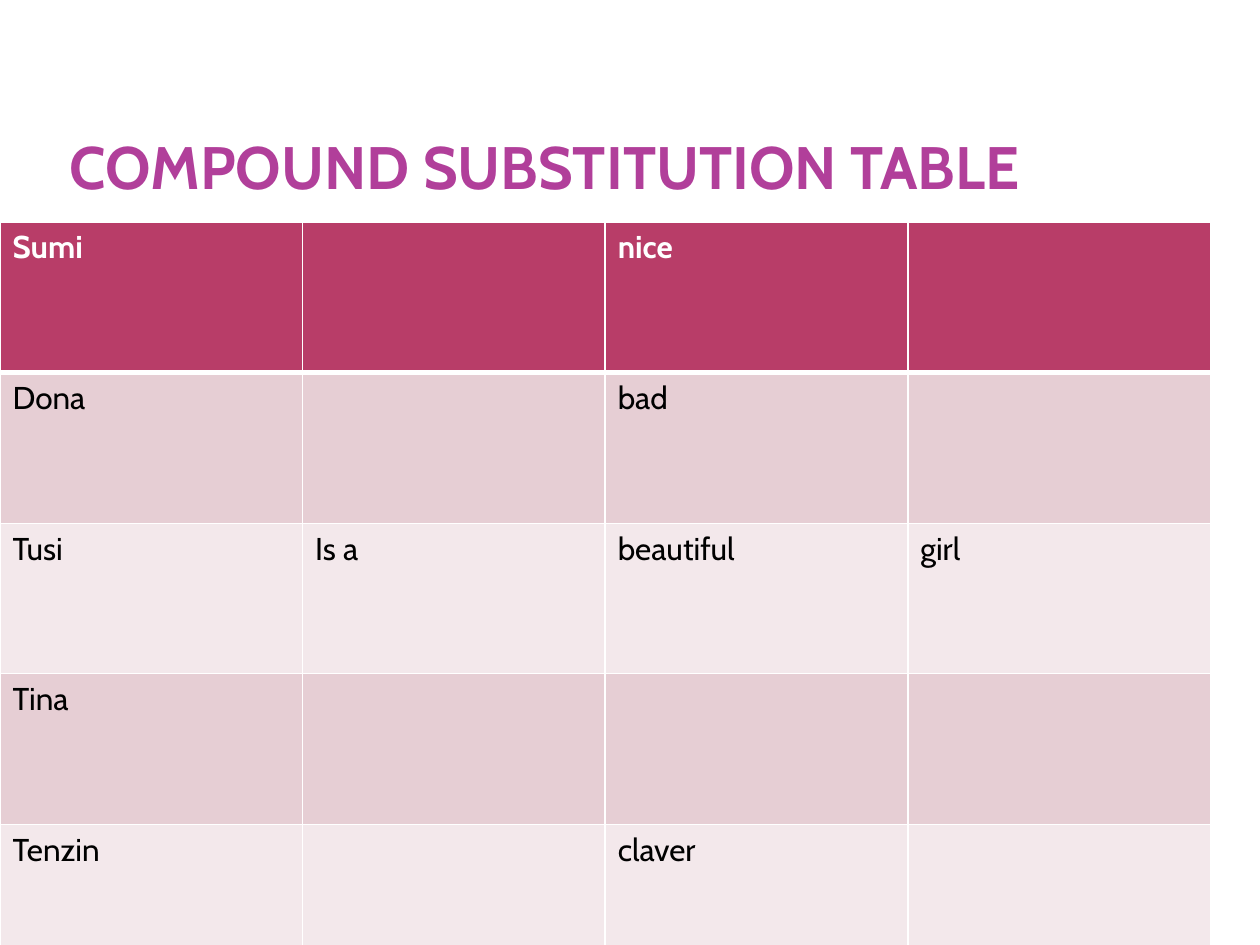
from dataclasses import dataclass

from lxml.etree import SubElement
from pptx import Presentation
from pptx.dml.color import RGBColor as Rgb
from pptx.enum.text import MSO_ANCHOR as Anchor, MSO_AUTO_SIZE as AutoSize, PP_ALIGN as Align
from pptx.oxml.ns import qn
from pptx.util import Cm, Pt


@dataclass(frozen=True)
class Theme:
    """Colours, font and type sizes of the slide."""
    font: str = "Cabin"
    title: str = "B13F9A"
    header: str = "B83D68"
    bands: tuple = ("E6CED4", "F3E8EB")
    rule: str = "FFFFFF"
    header_text: str = "FFFFFF"
    body_text: str = "000000"
    title_size: float = 34.2
    cell_size: float = 18
    thin: float = 1
    thick: float = 3


THEME = Theme()
WORDS = (
    ("Sumi", "", "nice", ""),
    ("Dona", "", "bad", ""),
    ("Tusi", "Is a", "beautiful", "girl"),
    ("Tina", "", "", ""),
    ("Tenzin", "", "claver", ""),
)


def style_font(font, size, color, bold):
    """Apply the theme font with the given size, colour and weight."""
    font.name = THEME.font
    font.size = Pt(size)
    font.bold = bold
    font.color.rgb = Rgb.from_string(color)


def add_heading(slide, text, left, top, width, height):
    """Fill the title placeholder, resting the text on the foot of its box."""
    heading = slide.shapes.title
    heading.left, heading.top, heading.width, heading.height = left, top, width, height
    frame = heading.text_frame
    frame.text = text
    frame.word_wrap = True
    frame.auto_size = AutoSize.NONE
    frame.vertical_anchor = Anchor.BOTTOM
    frame.margin_left = frame.margin_right = Cm(0.13)
    frame.margin_top = frame.margin_bottom = 0
    line = frame.paragraphs[0]
    line.alignment = Align.LEFT
    style_font(line.runs[0].font, THEME.title_size, THEME.title, True)


def rule_cell(cell, top, bottom):
    """Draw the four borders of a cell, with thin rules at the sides."""
    properties = cell._tc.get_or_add_tcPr()
    weights = {"a:lnL": THEME.thin, "a:lnR": THEME.thin, "a:lnT": top, "a:lnB": bottom}
    for side, weight in weights.items():
        rule = SubElement(properties, qn(side), w=str(Pt(weight)))
        SubElement(SubElement(rule, qn("a:solidFill")), qn("a:srgbClr"), val=THEME.rule)


def add_word_table(slide, rows, left, top, width, height):
    """Place an evenly divided table with a header and banded rows."""
    columns = len(rows[0])
    table = slide.shapes.add_table(len(rows), columns, left, top, width, height).table
    for row_index, words in enumerate(rows):
        is_header = row_index == 0
        fill = THEME.header if is_header else THEME.bands[(row_index - 1) % 2]
        color = THEME.header_text if is_header else THEME.body_text
        above = THEME.thick if row_index == 1 else THEME.thin
        below = THEME.thick if is_header else THEME.thin
        for column_index, word in enumerate(words):
            cell = table.cell(row_index, column_index)
            rule_cell(cell, above, below)
            cell.fill.solid()
            cell.fill.fore_color.rgb = Rgb.from_string(fill)
            cell.text = word
            style_font(cell.text_frame.paragraphs[0].font, THEME.cell_size, color, is_header)
            for run in cell.text_frame.paragraphs[0].runs:
                style_font(run.font, THEME.cell_size, color, is_header)


def main():
    """Build the slide and save it."""
    deck = Presentation()
    deck.slide_width, deck.slide_height = Cm(25.4), Cm(19.05)
    slide = deck.slides.add_slide(deck.slide_layouts[5])
    add_heading(slide, "COMPOUND SUBSTITUTION TABLE", Cm(1.27), Cm(0.89), Cm(20.12), Cm(3.18))
    add_word_table(slide, WORDS, 0, Cm(4.48), Cm(24.4), Cm(15.17))
    deck.save("out.pptx")


if __name__ == "__main__":
    main()
